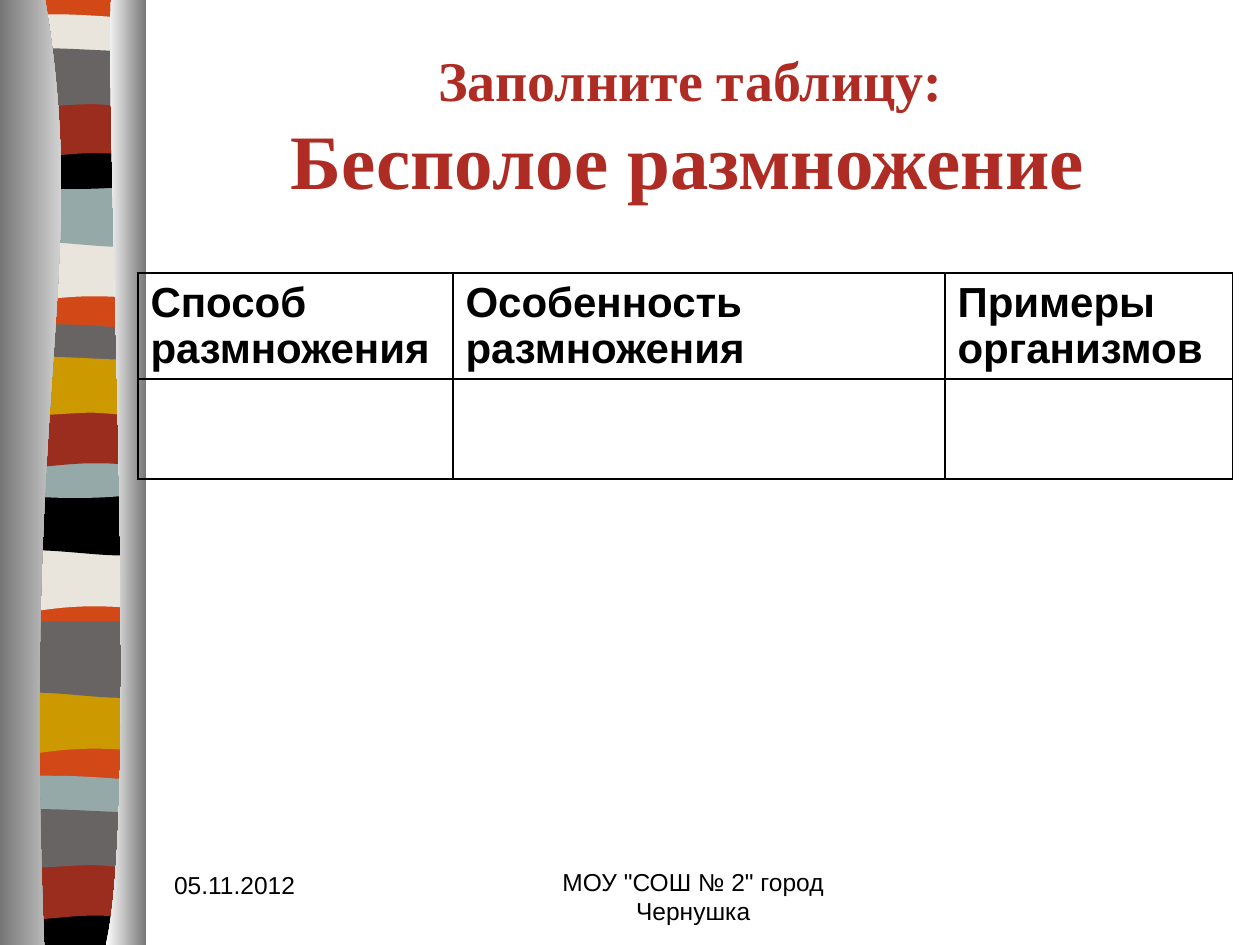
from lxml.etree import SubElement as Sub
from pptx import Presentation as Deck
from pptx.dml.color import RGBColor as RGB
from pptx.enum.text import MSO_ANCHOR as Anchor, PP_ALIGN as Align
from pptx.oxml.ns import qn
from pptx.util import Cm, Pt

ORANGE = RGB(0xD3, 0x48, 0x17)
CREAM = RGB(0xE9, 0xE5, 0xDC)
TEAL = RGB(0x96, 0xA9, 0xA9)
BRICK = RGB(0x9B, 0x2D, 0x1F)
STONE = RGB(0x69, 0x64, 0x64)
GOLD = RGB(0xCC, 0x99, 0x00)
BLACK = RGB(0, 0, 0)
WHITE = RGB(0xFF, 0xFF, 0xFF)
GREY = RGB(0x76, 0x76, 0x76)
RED = RGB(0xAF, 0x2C, 0x25)

WIDE, HIGH = 25.4, 19.05
LEFT, RIGHT = 0.13, 2.9  # sides of the striped band, cm
SWELL = 0.14  # how far each wave reaches past its edges

# Wave outlines in cm below the band's top: the lower edge runs right to left,
# the upper edge left to right; each edge is a start point and cubic curves,
# or two points for a straight line.
FLAT = [(LEFT, 0), (RIGHT, 0)]
BUMP = [(LEFT, 0), (1.83, 0.13), (2.31, 0), (RIGHT, 0)]
WAVES = {
    "sweep": ([(RIGHT, 1.19), (1, 0.99), (0.6, 1.4), (LEFT, 1.19)], FLAT),
    "dip": ([(RIGHT, 1.19), (2.44, 1.4), (1, 1.04), (LEFT, 1.19)], FLAT),
    "crest": ([(RIGHT, 0.61), (2.44, 0.74), (0.6, 0.74), (LEFT, 0.61)],
              [(LEFT, 0), (0.3, -0.13), (0.74, -0.1), (1.19, -0.1),
               (1.65, -0.1), (2.54, -0.03), (RIGHT, 0)]),
    "bowl": ([(RIGHT, 0.81), (2.44, 0.97), (0.6, 0.97), (LEFT, 0.81)], BUMP),
    "arch": ([(RIGHT, 1.19), (2.46, 1.07), (2.29, 1.07), (1.83, 1.07),
              (1.37, 1.07), (0.55, 1.19), (LEFT, 1.19)], FLAT),
    "roll": ([(RIGHT, 0.79), (2.72, 0.91), (2.29, 0.79), (1.83, 0.79),
              (1.37, 0.79), (0.43, 0.91), (LEFT, 0.79)],
             [(LEFT, 0), (0.53, -0.13), (2, 0), (2.46, 0)] + [(RIGHT, 0)] * 3),
    "base": ([(RIGHT, 0.83), (LEFT, 0.83)], BUMP),
}

# Wave, top and colour, from back to front
BANDS = [
    ("sweep", 4.7, CREAM), ("dip", 3.58, TEAL), ("crest", 0.53, CREAM),
    ("bowl", 2.74, BLACK), ("arch", 1.88, BRICK), ("roll", 1.17, STONE),
    ("sweep", 10.95, CREAM), ("dip", 9.8, BLACK), ("crest", 6.78, STONE),
    ("bowl", 8.97, TEAL), ("arch", 8.13, BRICK), ("roll", 7.39, GOLD),
    ("sweep", 13.82, GOLD), ("dip", 12.67, STONE), ("crest", 15.88, TEAL),
    ("base", 18.08, BLACK), ("arch", 17.25, BRICK), ("roll", 16.51, STONE),
]


def bend(nodes):
    """Merge three line nodes into one cubic curve."""
    head = nodes[0]
    arc = head.makeelement(qn("a:cubicBezTo"))
    head.addprevious(arc)
    for node in nodes:
        arc.append(node[0])
        node.getparent().remove(node)


def add_form(group, edges):
    pts = [(Cm(x), Cm(y)) for edge in edges for x, y in edge]
    pen = group.shapes.build_freeform(*pts[0], scale=1.0)
    pen.add_line_segments(pts[1:], close=True)
    form = pen.convert_to_shape()
    nodes = list(form._element.iter(qn("a:moveTo"), qn("a:lnTo")))
    first = 0
    for edge in edges:
        if len(edge) > 2:
            for i in range(first + 1, first + len(edge), 3):
                bend(nodes[i:i + 3])
        first += len(edge)
    form.shadow.inherit = False
    form.line.fill.background()
    return form


def add_band(group, edges, tone):
    fill = add_form(group, edges).fill
    fill.solid()
    fill.fore_color.rgb = tone


def add_side(group, edges, tones):
    fill = add_form(group, edges).fill
    fill.gradient()
    fill.gradient_angle = 0
    for stop, tone, spot in zip(fill.gradient_stops, tones, (0, 1)):
        stop.color.rgb = tone
        stop.position = spot


def shift(edge, down):
    return [(x, y + down) for x, y in edge]


def add_strip(slide):
    group = slide.shapes.add_group_shape()
    add_band(group, [[(LEFT, 0), (RIGHT, 0)], [(RIGHT, 19), (LEFT, 19)]], ORANGE)
    for wave, top, tone in BANDS:
        low, high = WAVES[wave]
        add_band(group, [shift(low, top + SWELL), shift(high, top - SWELL)], tone)
    # Shaded sides over the bands
    inner = [(0.91, 0), (1.83, 5.49), (0.43, 7.52), (0.89, HIGH)]
    add_side(group, [inner, [(0, HIGH), (0, 0)]], (GREY, WHITE))
    outer = [(2.24, 0), (2.13, 3.18), (2.82, 16.41), (2.13, HIGH)]
    add_side(group, [outer, [(2.95, HIGH), (2.95, 0)]], (WHITE, GREY))


def add_run(para, text, size, tone=BLACK, face="Arial", bold=False):
    run = para.add_run()
    run.text = text
    font = run.font
    font.size, font.name, font.bold = Pt(size), face, bold
    font.color.rgb = tone


def set_title(slide):
    box = slide.shapes.title
    box.left, box.top, box.width, box.height = Cm(3.26), Cm(0.6), Cm(21.59), Cm(3.86)
    box.text_frame.vertical_anchor = Anchor.MIDDLE
    para = box.text_frame.paragraphs[0]
    para.alignment = Align.CENTER
    add_run(para, "Заполните таблицу: ", 32, RED, "Times New Roman", True)
    para.add_line_break()
    add_run(para, "Бесполое размножение ", 44, RED, "Times New Roman", True)


def set_cell(cell):
    """Clear the fill and draw a thin black border on all sides."""
    props = cell._tc.get_or_add_tcPr()
    for side in ("lnL", "lnR", "lnT", "lnB"):
        line = Sub(props, qn(f"a:{side}"), w=str(Pt(1)))
        Sub(Sub(line, qn("a:solidFill")), qn("a:srgbClr"), val=str(BLACK))
    cell.fill.background()


def add_grid(slide, heads, cols, rows):
    frame = slide.shapes.add_table(len(rows), len(cols), Cm(2.78), Cm(5.5),
                                   Cm(sum(cols)), Cm(sum(rows)))
    grid = frame.table
    grid.first_row = grid.horz_banding = False
    for col, wide in zip(grid.columns, cols):
        col.width = Cm(wide)
    for row, high in zip(grid.rows, rows):
        row.height = Cm(high)
    for cell in grid.iter_cells():
        set_cell(cell)
    for cell, head in zip(grid.rows[0].cells, heads):
        add_run(cell.text_frame.paragraphs[0], head, 24, bold=True)


def add_note(slide, text, left, top, wide, align):
    box = slide.shapes.add_textbox(Cm(left), Cm(top), Cm(wide), Cm(1.27))
    box.text_frame.word_wrap = True
    para = box.text_frame.paragraphs[0]
    para.alignment = align
    add_run(para, text, 14)


def main():
    deck = Deck()
    deck.slide_width, deck.slide_height = Cm(WIDE), Cm(HIGH)
    slide = deck.slides.add_slide(deck.slide_layouts[5])

    # Striped strip on the left
    add_strip(slide)

    # Title, table and footer
    set_title(slide)
    add_grid(slide,
             ("Способ размножения", "Особенность размножения", "Примеры организмов"),
             (6.35, 9.92, 5.8), (2.14, 2.01))
    add_note(slide, "05.11.2012", 3.26, 17.41, 5.28, Align.LEFT)
    add_note(slide, "МОУ \"СОШ № 2\" город Чернушка", 9.95, 17.35, 8.05, Align.CENTER)

    deck.save("out.pptx")


if __name__ == "__main__":
    main()
